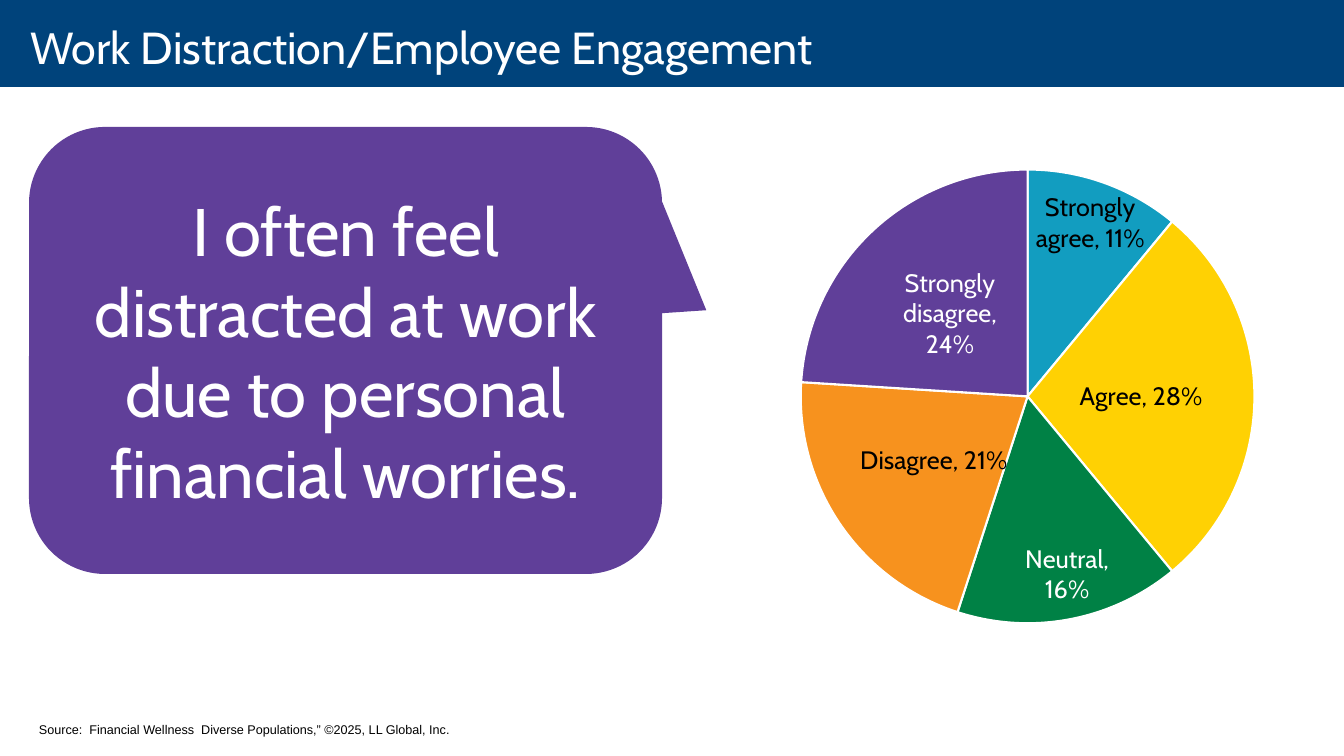
from dataclasses import dataclass

from lxml import etree
from pptx import Presentation
from pptx import util as u
from pptx.chart.data import CategoryChartData
from pptx.dml.color import RGBColor
from pptx.enum import chart as charts, shapes, text
from pptx.oxml import parse_xml
from pptx.oxml.ns import nsdecls, qn

PX = 914400 / 100.8


@dataclass(frozen=True)
class Theme:
    navy: str = "00437B"
    purple: str = "603F99"
    blue: str = "129DC0"
    yellow: str = "FFD103"
    green: str = "008145"
    orange: str = "F7921E"
    white: str = "FFFFFF"
    black: str = "000000"
    font: str = "Cabin"
    source_font: str = "Arial"
    title_size: int = 32
    quote_size: int = 48
    label_size: int = 18
    source_size: int = 9


THEME = Theme()


@dataclass(frozen=True)
class Box:
    left: int
    top: int
    width: int
    height: int

    def emu(self) -> tuple[int, ...]:
        return tuple(px(v) for v in (self.left, self.top, self.width, self.height))


@dataclass(frozen=True)
class Answer:
    name: str
    share: float
    fill: str
    ink: str
    lines: tuple[str, ...] = ()
    shift: tuple[float, float] | None = None


ANSWERS = [
    Answer("Strongly agree", 0.11, THEME.blue, THEME.black,
           ("Strongly", "agree, 11%"), (0.04, -0.11)),
    Answer("Agree", 0.28, THEME.yellow, THEME.black),
    Answer("Neutral", 0.16, THEME.green, THEME.white,
           ("Neutral,", "16%"), (0.03, 0.11)),
    Answer("Disagree", 0.21, THEME.orange, THEME.black),
    Answer("Strongly disagree", 0.24, THEME.purple, THEME.white,
           ("Strongly", "disagree,", "24%")),
]


def px(value: int) -> int:
    return round(value * PX)


def rgb(value: str) -> RGBColor:
    return RGBColor.from_string(value)


def style(font, face: str, size: int, color: str) -> None:
    font.name = face
    font.size = u.Pt(size)
    font.color.rgb = rgb(color)


def write(paragraph, words: str, face: str, size: int, color: str, align) -> None:
    paragraph.alignment = align
    run = paragraph.add_run()
    run.text = words
    style(run.font, face, size, color)


def add_filled(slide, kind, box: Box, fill: str):
    shape = slide.shapes.add_shape(kind, *box.emu())
    shape.shadow.inherit = False
    shape.fill.solid()
    shape.fill.fore_color.rgb = rgb(fill)
    shape.line.fill.background()
    return shape


def add_heading(slide) -> None:
    band = add_filled(slide, shapes.MSO_SHAPE.RECTANGLE, Box(0, 0, 1344, 87), THEME.navy)
    title = slide.shapes.title
    title._element.addprevious(band._element)
    title.left, title.top, title.width, title.height = Box(0, -2, 1344, 98).emu()
    frame = title.text_frame
    frame.auto_size = text.MSO_AUTO_SIZE.NONE
    frame.word_wrap = False
    frame.vertical_anchor = text.MSO_ANCHOR.MIDDLE
    frame.margin_left, frame.margin_right = px(30), px(20)
    frame.margin_top = frame.margin_bottom = 0
    write(frame.paragraphs[0], "Work Distraction/Employee Engagement", THEME.font,
          THEME.title_size, THEME.white, text.PP_ALIGN.LEFT)


def add_quote(slide) -> None:
    quote = add_filled(slide, shapes.MSO_SHAPE.ROUNDED_RECTANGULAR_CALLOUT,
                       Box(29, 127, 633, 447), THEME.purple)
    for index, value in enumerate((0.57, -0.09, 0.17)):
        quote.adjustments[index] = value
    quote.text_frame.word_wrap = True
    quote.text_frame.vertical_anchor = text.MSO_ANCHOR.MIDDLE
    write(quote.text_frame.paragraphs[0],
          "I often feel distracted at work due to personal financial worries.",
          THEME.font, THEME.quote_size, THEME.white, text.PP_ALIGN.CENTER)


def manual_layout(**values):
    body = "".join(f'<c:{key} val="{value}"/>' for key, value in values.items())
    return parse_xml(f'<c:layout {nsdecls("c")}><c:manualLayout>{body}'
                     "</c:manualLayout></c:layout>")


def label_answer(label, answer: Answer) -> None:
    if answer.lines:
        frame = label.text_frame
        for index, line in enumerate(answer.lines):
            paragraph = frame.add_paragraph() if index else frame.paragraphs[0]
            write(paragraph, line, THEME.font, THEME.label_size, answer.ink,
                  text.PP_ALIGN.CENTER)
    else:
        style(label.font, THEME.font, THEME.label_size, answer.ink)
    label.position = charts.XL_LABEL_POSITION.CENTER


def add_answers(slide) -> None:
    data = CategoryChartData(number_format="0%")
    data.categories = [answer.name for answer in ANSWERS]
    data.add_series("Series 1", [answer.share for answer in ANSWERS])
    chart = slide.shapes.add_chart(charts.XL_CHART_TYPE.PIE,
                                   *Box(710, 97, 605, 605).emu(), data).chart
    chart.has_title = False
    chart.has_legend = False
    style(chart.font, THEME.font, THEME.label_size, THEME.black)
    chart.plots[0].vary_by_categories = True

    pie = chart.plots[0].series[0]
    labels = pie.data_labels
    labels.show_value = labels.show_category_name = True
    labels.number_format = "0%"
    labels.number_format_is_linked = False
    labels.position = charts.XL_LABEL_POSITION.CENTER
    style(labels.font, THEME.font, THEME.label_size, THEME.white)

    for index, answer in enumerate(ANSWERS):
        point = pie.points[index]
        point.format.fill.solid()
        point.format.fill.fore_color.rgb = rgb(answer.fill)
        point.format.line.color.rgb = rgb(THEME.white)
        point.format.line.width = u.Pt(1.5)
        label_answer(point.data_label, answer)

    root = chart._chartSpace
    for label, answer in zip(root.iter(qn("c:dLbl")), ANSWERS):
        label.find(qn("c:showCatName")).set("val", "1")
        if answer.shift:
            x, y = answer.shift
            label.find(qn("c:idx")).addnext(manual_layout(x=x, y=y))
    for flag in list(root.iter(qn("c:showBubbleSize"))):
        separator = etree.Element(qn("c:separator"))
        separator.text = ", "
        flag.addnext(separator)

    plot_area = next(root.iter(qn("c:plotArea")))
    for layout in plot_area.findall(qn("c:layout")):
        plot_area.remove(layout)
    plot_area.insert(0, manual_layout(layoutTarget="inner", xMode="edge", yMode="edge",
                                      x=0.15, y=0.12, w=0.75, h=0.75))


def add_source(slide) -> None:
    frame = slide.shapes.add_textbox(*Box(29, 717, 523, 25).emu()).text_frame
    frame.word_wrap = True
    frame.auto_size = text.MSO_AUTO_SIZE.SHAPE_TO_FIT_TEXT
    write(frame.paragraphs[0],
          "Source:  Financial Wellness  Diverse Populations,” ©2025, LL Global, Inc.",
          THEME.source_font, THEME.source_size, THEME.black, text.PP_ALIGN.LEFT)


def main() -> None:
    deck = Presentation()
    deck.slide_width, deck.slide_height = px(1344), px(756)
    slide = deck.slides.add_slide(deck.slide_layouts.get_by_name("Title Only"))
    add_heading(slide)
    add_quote(slide)
    add_answers(slide)
    add_source(slide)
    deck.save("out.pptx")


if __name__ == "__main__":
    main()
